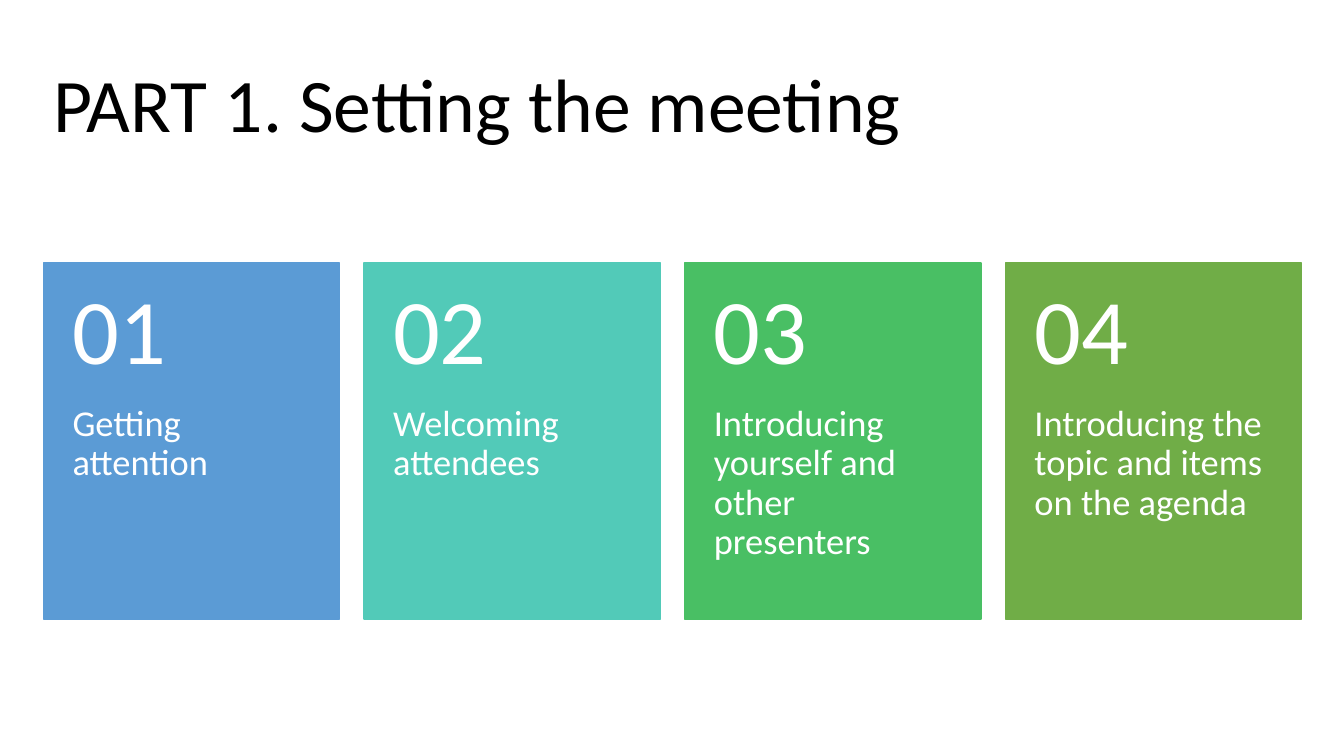
import pptx
import pptx.dml.color
import pptx.enum.shapes
import pptx.enum.text
import pptx.util

EMU_PER_PX = 9144  # 100 px to the inch
FONT = "Calibri"
COLOURS = {
    "black": "000000",
    "white": "FFFFFF",
    "blue": "5B9BD5",
    "teal": "52CAB8",
    "green": "49BF64",
    "olive": "70AD47",
}
STEPS = [
    ("blue", "Getting attention"),
    ("teal", "Welcoming attendees"),
    ("green", "Introducing yourself and other presenters"),
    ("olive", "Introducing the topic and items on the agenda"),
]

# Card grid
CARD_LEFT, CARD_TOP, CARD_WIDTH, CARD_HEIGHT = 43, 261, 294, 353
CARD_PITCH = 318
NUMBER_HEIGHT = 141
SIDE_INSET = 29


def px(length):
    return pptx.util.Emu(length * EMU_PER_PX)


def colour(name):
    return pptx.dml.color.RGBColor.from_string(COLOURS[name])


def write_text(frame, text, *, size, ink="white", anchor="TOP", insets=None, after=0):
    """Fill a text frame with one formatted paragraph; insets run left, top, right, bottom."""
    frame.word_wrap = True
    frame.auto_size = pptx.enum.text.MSO_AUTO_SIZE.NONE
    frame.vertical_anchor = getattr(pptx.enum.text.MSO_ANCHOR, anchor)
    if insets:
        (frame.margin_left, frame.margin_top,
         frame.margin_right, frame.margin_bottom) = map(px, insets)
    para = frame.paragraphs[0]
    para.alignment = pptx.enum.text.PP_ALIGN.LEFT
    para.line_spacing = 0.9
    para.space_before = pptx.util.Pt(0)
    para.space_after = pptx.util.Pt(after)
    span = para.add_run()
    span.text = text
    span.font.name = FONT
    span.font.size = pptx.util.Pt(size)
    span.font.color.rgb = colour(ink)


def add_title(page, text):
    title = page.shapes.title
    title.left, title.top, title.width, title.height = map(px, (43, 35, 1248, 145))
    write_text(title.text_frame, text, size=54, ink="black", anchor="MIDDLE")


def add_panel(page, left, fill):
    panel = page.shapes.add_shape(
        pptx.enum.shapes.MSO_SHAPE.RECTANGLE,
        px(left), px(CARD_TOP), px(CARD_WIDTH), px(CARD_HEIGHT))
    panel.shadow.inherit = False
    panel.fill.solid()
    panel.fill.fore_color.rgb = colour(fill)
    panel.line.color.rgb = colour(fill)
    panel.line.width = pptx.util.Pt(1)


def add_label(page, left, top, height, text, **text_format):
    box = page.shapes.add_textbox(px(left), px(top), px(CARD_WIDTH), px(height))
    write_text(box.text_frame, text, **text_format)


def add_card(page, index, fill, caption):
    left = CARD_LEFT + index * CARD_PITCH
    add_panel(page, left, fill)
    add_label(page, left, CARD_TOP + NUMBER_HEIGHT, CARD_HEIGHT - NUMBER_HEIGHT, caption,
              size=26, insets=(SIDE_INSET, 0, SIDE_INSET, 36), after=9)
    add_label(page, left, CARD_TOP, NUMBER_HEIGHT, f"{index + 1:02d}",
              size=66, anchor="MIDDLE", insets=(SIDE_INSET, 18, SIDE_INSET, 18), after=23)


def main():
    deck = pptx.Presentation()
    deck.slide_width, deck.slide_height = px(1333), px(750)
    page = deck.slides.add_slide(deck.slide_layouts.get_by_name("Title Only"))
    page.background.fill.solid()
    page.background.fill.fore_color.rgb = colour("white")

    # Heading, then one card per step
    add_title(page, "PART 1. Setting the meeting")
    for index, (fill, caption) in enumerate(STEPS):
        add_card(page, index, fill, caption)

    deck.save("out.pptx")


if __name__ == "__main__":
    main()
